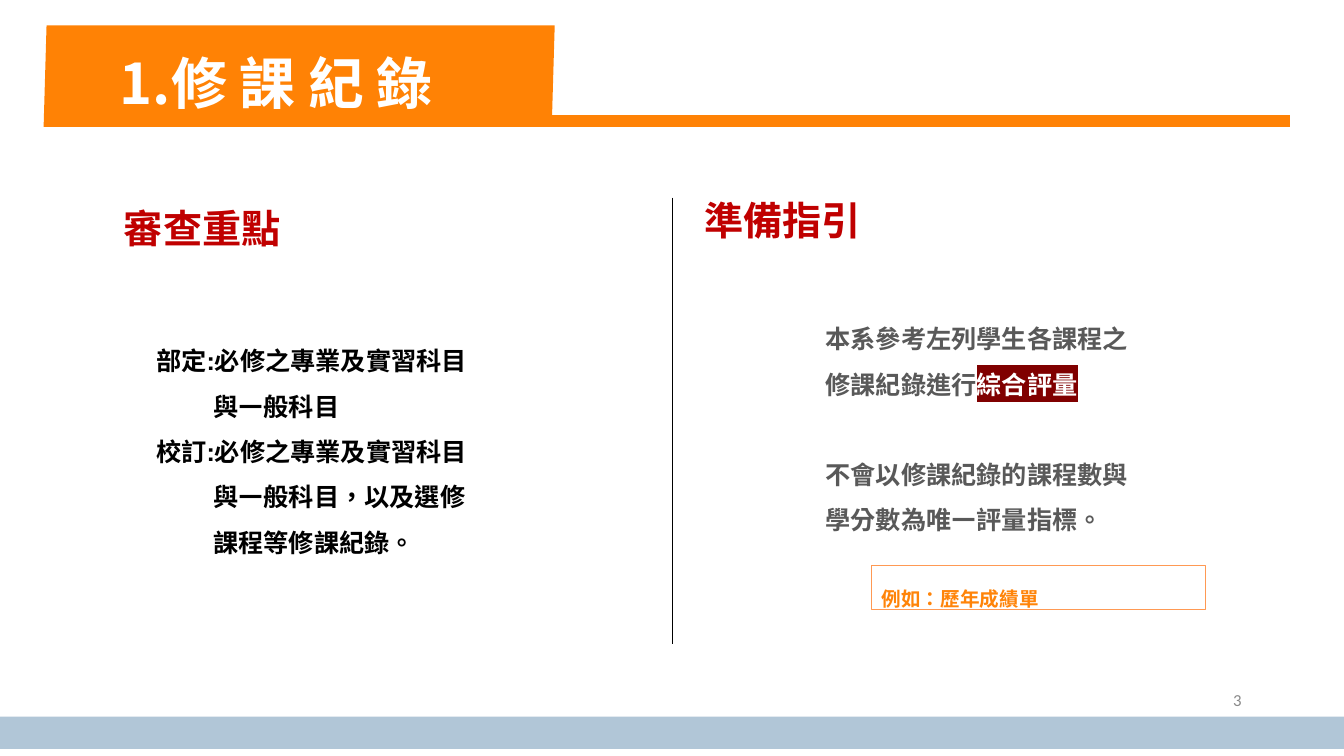
import dataclasses

import lxml.etree
import pptx
import pptx.dml.color
import pptx.enum.lang
import pptx.enum.shapes
import pptx.enum.text
import pptx.oxml.ns
import pptx.util

Cm = pptx.util.Cm
Pt = pptx.util.Pt
SHAPE = pptx.enum.shapes.MSO_SHAPE
ALIGN = pptx.enum.text.PP_ALIGN
ANCHOR = pptx.enum.text.MSO_ANCHOR
qn = pptx.oxml.ns.qn


@dataclasses.dataclass(frozen=True)
class Theme:
    orange: str = "FF8205"
    amber: str = "FF8409"
    edge: str = "FF9953"
    red: str = "C00000"
    maroon: str = "800000"
    white: str = "FFFFFF"
    black: str = "000000"
    dark: str = "595959"
    gray: str = "898989"
    blue: str = "B1C6D7"
    font: str = "Arial"
    han: str = "Noto Sans CJK SC"
    digit: str = "Calibri"
    title: int = 40
    head: int = 28
    body: int = 18
    note: int = 14
    page: int = 12


THEME = Theme()


def rgb(code):
    return pptx.dml.color.RGBColor.from_string(code)


def add_run(par, text, size, color, font, bold, mark=None):
    run = par.add_run()
    run.text = text
    run.font.size = Pt(size)
    run.font.bold = bold
    run.font.color.rgb = rgb(color)
    run.font.name = font
    run.font.language_id = pptx.enum.lang.MSO_LANGUAGE_ID.TRADITIONAL_CHINESE
    props = run.font._element
    east = lxml.etree.Element(qn("a:ea"), typeface=THEME.han)
    props.find(qn("a:latin")).addnext(east)
    if mark:
        light = lxml.etree.Element(qn("a:highlight"))
        lxml.etree.SubElement(light, qn("a:srgbClr"), val=mark)
        props.find(qn("a:solidFill")).addnext(light)


def write(frame, text, size, color, font=THEME.font, bold=True, align=ALIGN.LEFT,
          gap=1.0, before=0, indent=0, marked="", new=False):
    """Fill the first paragraph, or a new one; marked text follows on a dark ground."""
    par = frame.add_paragraph() if new else frame.paragraphs[0]
    par.alignment = align
    par.line_spacing = gap
    par.space_before = Pt(before)
    props = par._p.get_or_add_pPr()
    props.set("marL", str(Cm(indent)))
    props.set("indent", "0")
    lxml.etree.SubElement(props, qn("a:buNone"))
    add_run(par, text, size, color, font, bold)
    if marked:
        add_run(par, marked, size, THEME.white, font, bold, THEME.maroon)


def place(shape, left, top, width, height, anchor=ANCHOR.TOP):
    shape.left, shape.top = Cm(left), Cm(top)
    shape.width, shape.height = Cm(width), Cm(height)
    frame = shape.text_frame
    frame.word_wrap = True
    frame.auto_size = pptx.enum.text.MSO_AUTO_SIZE.NONE
    frame.vertical_anchor = anchor
    return frame


def add_block(slide, kind, left, top, width, height, fill, line=None):
    block = slide.shapes.add_shape(kind, Cm(left), Cm(top), Cm(width), Cm(height))
    block.shadow.inherit = False
    block.fill.solid()
    block.fill.fore_color.rgb = rgb(fill)
    if line:
        block.line.color.rgb = rgb(line)
        block.line.width = Pt(0.75)
    else:
        block.line.fill.background()
    return block


def add_banner(slide, left, top, width, height, text):
    bar = 0.3
    start = 9.68
    add_block(slide, SHAPE.RECTANGLE, left + start, top + height - bar,
              width - start, bar, THEME.orange)
    flag = add_block(slide, SHAPE.PARALLELOGRAM, left, top, 12.88, height, THEME.orange)
    flag.adjustments[0] = 0.029
    title = slide.shapes.title
    frame = place(title, left + 1.92, top + 0.59, 9.8, 1.8)
    frame.margin_left = frame.margin_right = 0
    frame.margin_top = frame.margin_bottom = 0
    write(frame, text, THEME.title, THEME.white, font=THEME.han)
    slide.shapes._spTree.append(title._element)


def add_column(slide, left, top, head, body, title, inset, drop, width, color, lines):
    """Put a heading at the corner and its list inset and dropped below it."""
    spots = slide.placeholders
    write(place(spots[head], left, top, 4.93, 1.45), title, THEME.head, THEME.red)
    frame = place(spots[body], left + inset, top + drop, width, 5.92)
    for i, (text, look) in enumerate(lines):
        write(frame, text, THEME.body, color, align=ALIGN.JUSTIFY, gap=1.5,
              new=i > 0, **look)


def add_rule(slide, left, top, height):
    rule = slide.shapes.add_connector(
        pptx.enum.shapes.MSO_CONNECTOR.STRAIGHT,
        Cm(left), Cm(top), Cm(left), Cm(top + height))
    rule.line.color.rgb = rgb(THEME.black)
    rule.line.width = Pt(1)
    lxml.etree.SubElement(rule._element.spPr, qn("a:effectLst"))


def add_note(slide, left, top, width, height, text):
    note = add_block(slide, SHAPE.RECTANGLE, left, top, width, height,
                     THEME.white, THEME.edge)
    frame = place(note, left, top, width, height)
    frame.margin_top = frame.margin_bottom = Cm(0.25)
    write(frame, text, THEME.note, THEME.amber, gap=1.5)


def add_footer(slide, left, top, width, height, page):
    add_block(slide, SHAPE.RECTANGLE, left, top, width, height, THEME.blue)
    box = slide.shapes.add_textbox(0, 0, 0, 0)
    frame = place(box, left + width - 9.95, top - 0.92, 7.62, 1.01, ANCHOR.MIDDLE)
    write(frame, page, THEME.page, THEME.gray, font=THEME.digit, bold=False,
          align=ALIGN.RIGHT)


def main():
    deck = pptx.Presentation()
    deck.slide_width, deck.slide_height = Cm(33.87), Cm(19.05)
    slide = deck.slides.add_slide(deck.slide_layouts.get_by_name("Comparison"))
    hang = {"indent": 1.44}
    add_banner(slide, 1.1, 0.64, 31.41, 2.56, "1.修 課 紀 錄")
    add_column(slide, 2.87, 5.03, 1, 2, "審查重點", 0.81, 3.17, 13.82, THEME.black, [
        ("部定:必修之專業及實習科目", {}),
        ("與㇐般科目", hang),
        ("校訂:必修之專業及實習科目", {}),
        ("與㇐般科目，以及選修", hang),
        ("課程等修課紀錄。", hang),
    ])
    add_column(slide, 17.5, 4.83, 3, 4, "準備指引", 3.05, 2.82, 9.45, THEME.dark, [
        ("本系參考左列學生各課程之", {}),
        ("修課紀錄進行", {"marked": "綜合評量"}),
        ("不會以修課紀錄的課程數與", {"before": 32}),
        ("學分數為唯㇐評量指標。", {}),
    ])
    add_rule(slide, 16.94, 4.98, 11.25)
    add_footer(slide, 0, 18.06, 33.87, 0.81, "3")
    add_note(slide, 21.97, 14.25, 8.41, 1.12, "例如：歷年成績單")
    deck.save("out.pptx")


if __name__ == "__main__":
    main()
